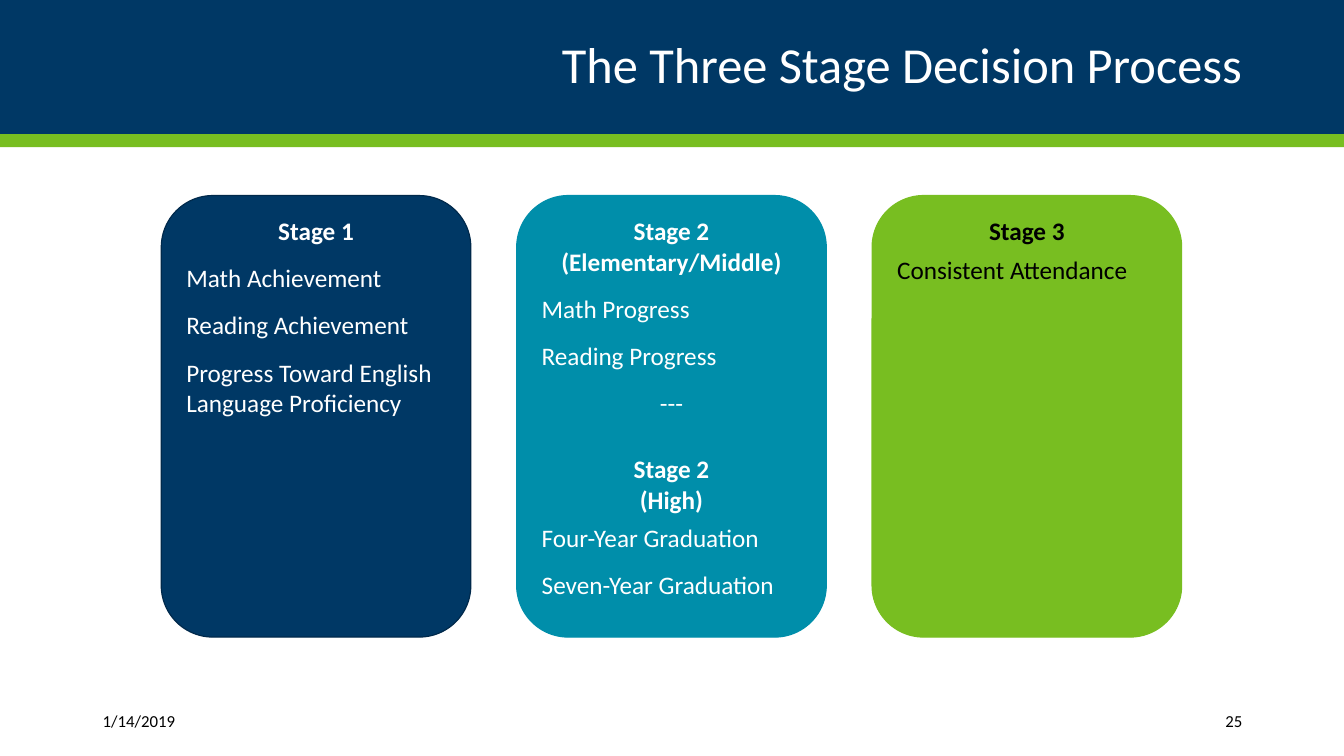
from pptx import Presentation
from pptx import util as u
from pptx.dml import color
from pptx.enum import shapes, text

COLORS = {
    "navy": "003865",
    "navy_edge": "00294B",
    "teal": "008EAA",
    "green": "78BE21",
    "white": "FFFFFF",
    "black": "000000",
}
LEFT, CENTER, RIGHT = text.PP_ALIGN.LEFT, text.PP_ALIGN.CENTER, text.PP_ALIGN.RIGHT

# Paragraph kinds: alignment, bold, points before, points after
KINDS = {
    "heading": (CENTER, True, 6, 6),
    "heading_top": (CENTER, True, 6, 0),
    "heading_end": (CENTER, True, 0, 6),
    "second_top": (CENTER, True, 20, 0),
    "second_end": (CENTER, True, 0, 0),
    "item": (LEFT, False, 6, 6),
    "last_item": (LEFT, False, 6, 0),
    "divider": (CENTER, False, 6, 6),
}

# Cards: fill, edge, text colour, paragraphs
STAGES = [
    ("navy", "navy_edge", "white", [
        ("Stage 1", "heading"),
        ("Math Achievement", "item"),
        ("Reading Achievement", "item"),
        ("Progress Toward English Language Proficiency", "item"),
    ]),
    ("teal", "teal", "white", [
        ("Stage 2", "heading_top"),
        ("(Elementary/Middle)", "heading_end"),
        ("Math Progress", "item"),
        ("Reading Progress", "item"),
        ("---", "divider"),
        ("Stage 2", "second_top"),
        ("(High)", "second_end"),
        ("Four-Year Graduation", "item"),
        ("Seven-Year Graduation", "item"),
    ]),
    ("green", "green", "black", [
        ("Stage 3", "heading_top"),
        ("Consistent Attendance", "last_item"),
    ]),
]
CARD_LEFT, CARD_TOP, CARD_WIDTH, CARD_HEIGHT = 1.6, 1.94, 3.07, 4.38
CARD_STEP = 3.525


def rgb(name):
    return color.RGBColor.from_string(COLORS[name])


def set_all(target, values):
    for name, value in values.items():
        setattr(target, name, value)


def write(paragraph, content, size, color_name, bold=False, **layout):
    run = paragraph.add_run()
    run.text = content
    set_all(run.font, {"name": "Calibri", "size": u.Pt(size), "bold": bold})
    run.font.color.rgb = rgb(color_name)
    set_all(paragraph, layout)


def add_box(slide, preset, box, fill, edge=None):
    shape = slide.shapes.add_shape(preset, *map(u.Inches, box))
    shape.shadow.inherit = False
    shape.fill.solid()
    shape.fill.fore_color.rgb = rgb(fill)
    if edge:
        shape.line.color.rgb = rgb(edge)
        shape.line.width = u.Pt(0.85)
    else:
        shape.line.fill.background()
    return shape


def add_label(slide, box, content, size, color_name, **layout):
    frame = slide.shapes.add_textbox(*map(u.Inches, box)).text_frame
    set_all(frame, {"word_wrap": True, "vertical_anchor": text.MSO_ANCHOR.MIDDLE})
    write(frame.paragraphs[0], content, size, color_name, **layout)


def add_stage(slide, left, fill, edge, color_name, lines):
    box = (left, CARD_TOP, CARD_WIDTH, CARD_HEIGHT)
    card = add_box(slide, shapes.MSO_SHAPE.ROUNDED_RECTANGLE, box, fill, edge)
    frame = card.text_frame
    set_all(frame, {"word_wrap": True, "vertical_anchor": text.MSO_ANCHOR.TOP})
    for index, (content, kind) in enumerate(lines):
        paragraph = frame.add_paragraph() if index else frame.paragraphs[0]
        alignment, bold, before, after = KINDS[kind]
        write(paragraph, content, 18, color_name, bold, alignment=alignment,
              space_before=u.Pt(before), space_after=u.Pt(after))


def main():
    presentation = Presentation()
    set_all(presentation, {"slide_width": u.Inches(13.33), "slide_height": u.Inches(7.5)})
    slide = presentation.slides.add_slide(presentation.slide_layouts[6])

    # Header band and title
    rectangle = shapes.MSO_SHAPE.RECTANGLE
    add_box(slide, rectangle, (0, 0, 13.33, 1.33), "navy")
    add_box(slide, rectangle, (0, 1.33, 13.33, 0.13), "green")
    add_label(slide, (0.92, 0.17, 11.5, 1), "The Three Stage Decision Process",
              36, "white", alignment=RIGHT, line_spacing=0.9)

    # Stage cards
    for index, stage in enumerate(STAGES):
        add_stage(slide, CARD_LEFT + index * CARD_STEP, *stage)

    # Footer
    add_label(slide, (0.92, 6.95, 1.49, 0.4), "1/14/2019", 12, "black", alignment=LEFT)
    add_label(slide, (10.82, 6.95, 1.6, 0.4), "25", 12, "black", alignment=RIGHT)

    presentation.save("out.pptx")


if __name__ == "__main__":
    main()
